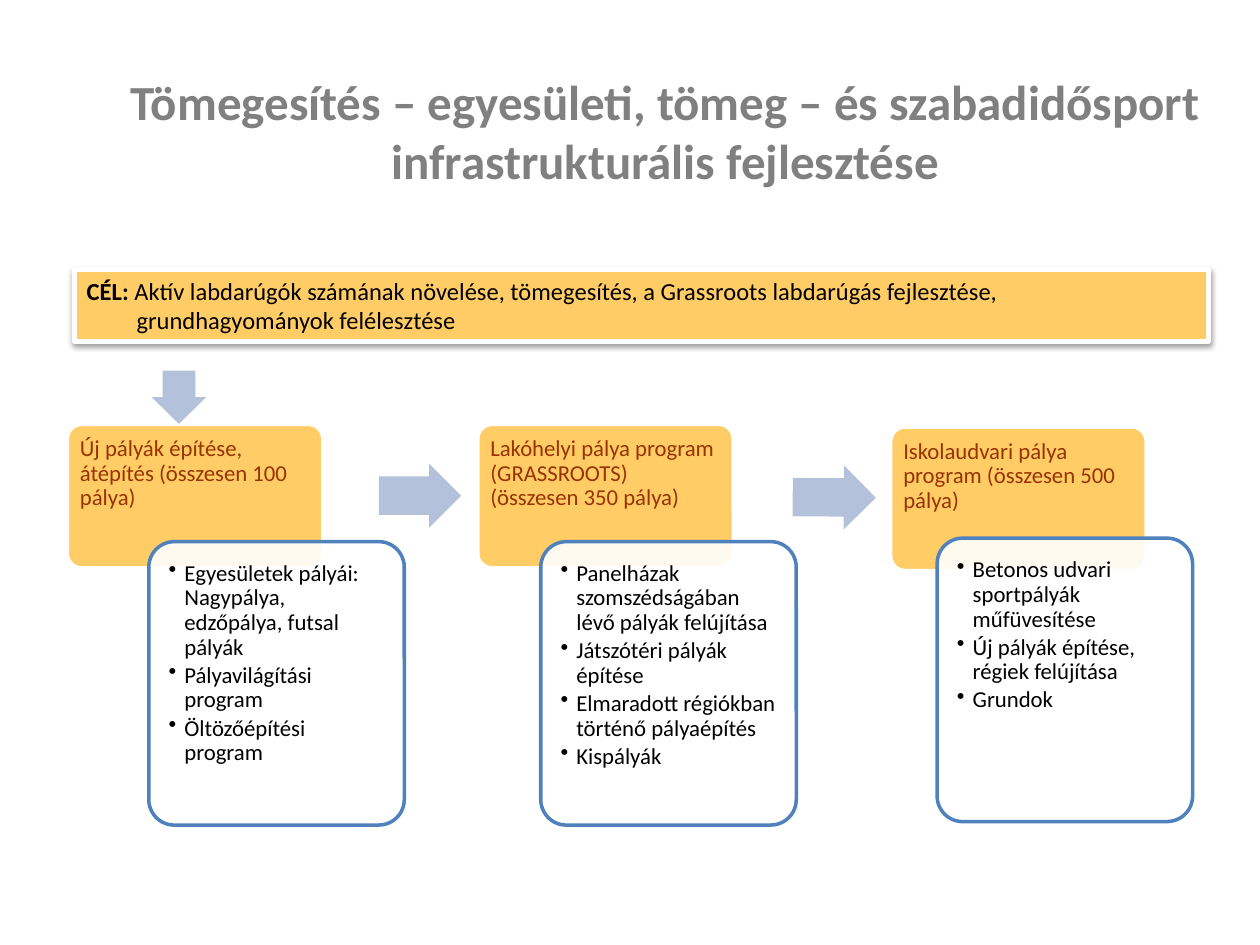
from dataclasses import dataclass

from lxml.etree import SubElement
from pptx import Presentation
from pptx.dml.color import RGBColor
from pptx.enum.shapes import MSO_SHAPE as Preset
from pptx.enum.text import MSO_ANCHOR as Anchor, PP_ALIGN as Align
from pptx.oxml.ns import qn
from pptx.shapes.autoshape import Shape
from pptx.slide import Slide
from pptx.text.text import TextFrame
from pptx.util import Pt


@dataclass(frozen=True)
class Theme:
    font: str = "Calibri"
    title: str = "808080"
    gold: str = "FFCC66"
    heading: str = "993300"
    text: str = "000000"
    white: str = "FFFFFF"
    outline: str = "4F81BD"
    arrow: str = "B3C1DB"
    title_size: float = 28
    goal_size: float = 14
    card_size: float = 13


@dataclass(frozen=True)
class Box:
    left: float
    top: float
    width: float
    height: float


@dataclass(frozen=True)
class Program:
    heading: str
    items: tuple[str, ...]
    heading_left: float
    heading_top: float
    detail_left: float
    detail_top: float


@dataclass(frozen=True)
class Arrow:
    box: Box
    rotation: float = 0


THEME = Theme()
CARD_WIDTH, HEADING_HEIGHT, DETAIL_HEIGHT = 146, 82, 162
BULLET_INDENT = 9
PROGRAMS = (
    Program("Új pályák építése, átépítés (összesen 100 pálya)",
            ("Egyesületek pályái: Nagypálya, edzőpálya, futsal pályák",
             "Pályavilágítási program", "Öltözőépítési program"),
            38.5, 242.5, 85, 309.5),
    Program("Lakóhelyi pálya program (GRASSROOTS) (összesen 350 pálya)",
            ("Panelházak szomszédságában lévő pályák felújítása",
             "Játszótéri pályák építése",
             "Elmaradott régiókban történő pályaépítés", "Kispályák"),
            273, 242.5, 309, 309.5),
    Program("Iskolaudvari pálya program (összesen 500 pálya)",
            ("Betonos udvari sportpályák műfüvesítése",
             "Új pályák építése, régiek felújítása", "Grundok"),
            509, 244, 535.5, 307.5),
)
ARROWS = (
    Arrow(Box(216.5, 265, 47, 36.5)),
    Arrow(Box(453, 266, 47.5, 36.5), 0.4),
    Arrow(Box(87, 211.5, 30.5, 31), 90),
)


def add_preset(slide: Slide, preset: Preset, box: Box, fill: str) -> Shape:
    """Add a flat preset shape without an outline."""
    shape = slide.shapes.add_shape(
        preset, Pt(box.left), Pt(box.top), Pt(box.width), Pt(box.height))
    shape.shadow.inherit = False
    shape.fill.solid()
    shape.fill.fore_color.rgb = RGBColor.from_string(fill)
    shape.line.fill.background()
    return shape


def set_outline(shape: Shape, color: str, width: float) -> None:
    """Give a shape a solid outline."""
    shape.line.color.rgb = RGBColor.from_string(color)
    shape.line.width = Pt(width)


def write(frame: TextFrame, lines: tuple[str, ...], color: str, size: float,
          align: Align = Align.LEFT, bold: bool = False, bullets: bool = False) -> None:
    """Fill a text frame with uniformly formatted paragraphs."""
    for index, line in enumerate(lines):
        paragraph = frame.add_paragraph() if index else frame.paragraphs[0]
        paragraph.text = line
        paragraph.alignment = align
        if bullets:
            properties = paragraph._p.get_or_add_pPr()
            properties.set("marL", str(Pt(BULLET_INDENT)))
            properties.set("indent", str(Pt(-BULLET_INDENT)))
            SubElement(properties, qn("a:buChar"), char="•")
        paragraph.font.name = THEME.font
        paragraph.font.size = Pt(size)
        paragraph.font.bold = bold
        paragraph.font.color.rgb = RGBColor.from_string(color)


def add_card(slide: Slide, box: Box, fill: str, outline: str,
             margins: tuple[float, float]) -> Shape:
    """Add a rounded card with top-anchored text."""
    card = add_preset(slide, Preset.ROUNDED_RECTANGLE, box, fill)
    card.adjustments[0] = 0.1
    set_outline(card, outline, 2)
    frame = card.text_frame
    frame.word_wrap = True
    frame.vertical_anchor = Anchor.TOP
    side, top = margins
    frame.margin_left = frame.margin_right = Pt(side)
    frame.margin_top = frame.margin_bottom = Pt(top)
    return card


def space_lines(frame: TextFrame, after: float) -> None:
    """Tighten the lines and set the gap after each paragraph."""
    for paragraph in frame.paragraphs:
        paragraph.line_spacing = 0.9
        paragraph.space_after = Pt(after)


def add_program(slide: Slide, program: Program) -> None:
    """Add a program heading with its overlapping detail card."""
    heading = add_card(
        slide, Box(program.heading_left, program.heading_top, CARD_WIDTH, HEADING_HEIGHT),
        THEME.gold, THEME.white, (4.8, 4.8))
    write(heading.text_frame, (program.heading,), THEME.heading, THEME.card_size)
    space_lines(heading.text_frame, 4.5)
    detail = add_card(
        slide, Box(program.detail_left, program.detail_top, CARD_WIDTH, DETAIL_HEIGHT),
        THEME.white, THEME.outline, (7.2, 7.2))
    color = detail._element.spPr.find(qn("a:solidFill"))[0]
    SubElement(color, qn("a:alpha"), val="90000")
    write(detail.text_frame, program.items, THEME.text, THEME.card_size, bullets=True)
    space_lines(detail.text_frame, 2)


def add_arrow(slide: Slide, arrow: Arrow) -> None:
    """Add a block arrow."""
    shape = add_preset(slide, Preset.RIGHT_ARROW, arrow.box, THEME.arrow)
    shape.adjustments[0] = 0.6
    shape.adjustments[1] = 0.5
    shape.rotation = arrow.rotation


def add_goal(slide: Slide) -> None:
    """Add the shadowed goal banner."""
    banner = add_preset(slide, Preset.RECTANGLE, Box(42.5, 154, 648, 41), THEME.gold)
    set_outline(banner, THEME.white, 3)
    effects = banner._element.spPr.find(qn("a:effectLst"))
    shadow = SubElement(effects, qn("a:outerShdw"), blurRad=str(Pt(3.1)),
                        dist=str(Pt(1.6)), dir="5400000", rotWithShape="0")
    color = SubElement(shadow, qn("a:srgbClr"), val=THEME.text)
    SubElement(color, qn("a:alpha"), val="38000")
    frame = banner.text_frame
    frame.word_wrap = True
    write(frame, ("", "grundhagyományok felélesztése"), THEME.text, THEME.goal_size)
    goal, continuation = frame.paragraphs
    label = goal.add_run()
    label.text = "CÉL: "
    label.font.bold = True
    goal.add_run().text = ("Aktív labdarúgók számának növelése, tömegesítés, "
                           "a Grassroots labdarúgás fejlesztése,")
    continuation._p.get_or_add_pPr().set("marL", str(Pt(28.5)))


def add_title(slide: Slide) -> None:
    """Place and format the slide title."""
    title = slide.shapes.title
    title.left, title.top, title.width, title.height = Pt(54), Pt(37.5), Pt(652), Pt(74)
    title.text_frame.vertical_anchor = Anchor.MIDDLE
    write(title.text_frame,
          ("Tömegesítés – egyesületi, tömeg – és szabadidősport infrastrukturális fejlesztése",),
          THEME.title, THEME.title_size, Align.CENTER, bold=True)


def main() -> None:
    """Build and save the slide."""
    deck = Presentation()
    deck.slide_width, deck.slide_height = Pt(720), Pt(540)
    slide = deck.slides.add_slide(deck.slide_layouts[5])
    add_title(slide)
    for program in PROGRAMS:
        add_program(slide, program)
    add_goal(slide)
    for arrow in ARROWS:
        add_arrow(slide, arrow)
    deck.save("out.pptx")


if __name__ == "__main__":
    main()
